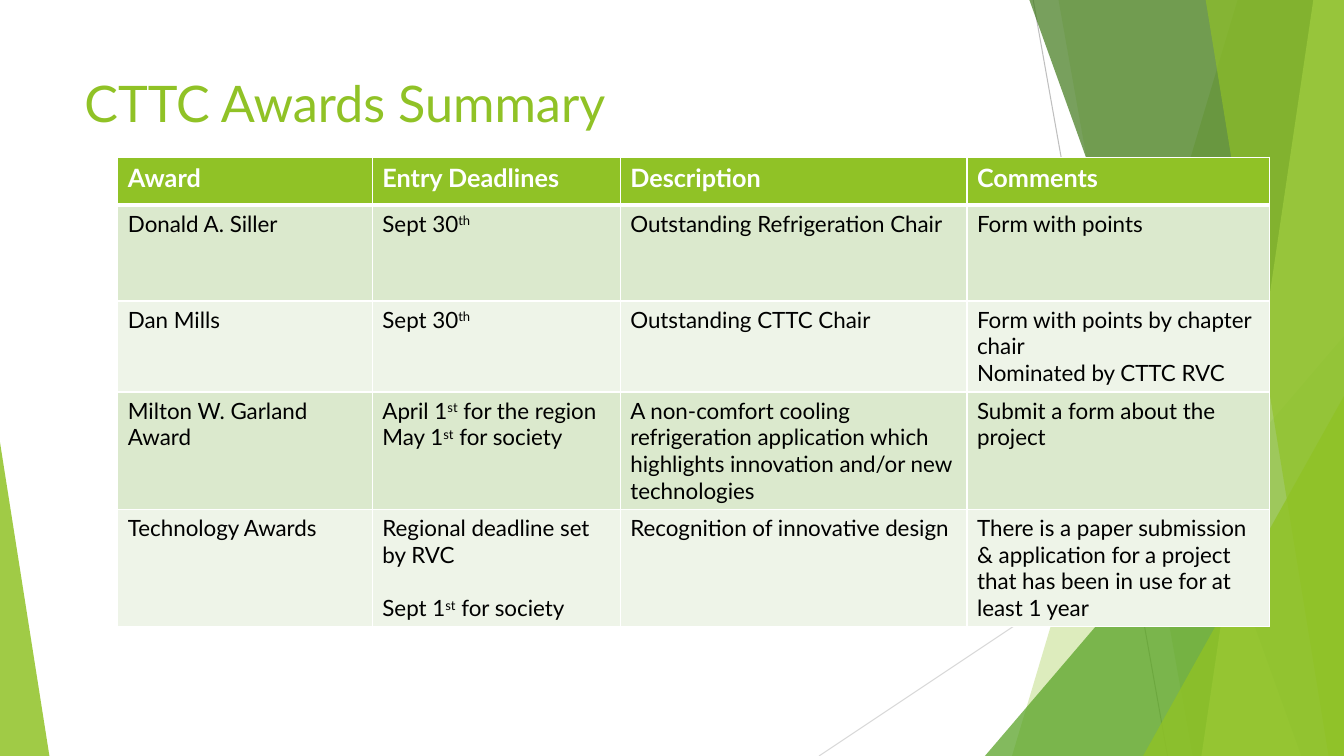
from pptx import Presentation
from pptx.dml.color import RGBColor
from pptx.enum.shapes import MSO_CONNECTOR, MSO_SHAPE
from pptx.enum.text import MSO_ANCHOR
from pptx.oxml.ns import qn
from pptx.util import Pt
from lxml.etree import SubElement

COLORS = {
    "lime": "90C226", "green": "54A021", "forest": "3F7819", "pale": "C0E474",
    "band": "DBE9CD", "light": "EEF4E8", "white": "FFFFFF", "black": "000000",
    "gray": "BFBFBF", "silver": "D9D9D9",
}
FONT = "Lato"
WIDTH, HEIGHT = 960, 540
COLUMNS = [181.8, 177.1, 247.7, 216.2]
ROWS = [34.3, 68.4, 65, 83.8, 83.8]
AWARDS = [
    ["Award", "Entry Deadlines", "Description", "Comments"],
    ["Donald A. Siller", "Sept 30^th^", "Outstanding Refrigeration Chair", "Form with points"],
    ["Dan Mills", "Sept 30^th^", "Outstanding CTTC Chair",
     "Form with points by chapter chair\nNominated by CTTC RVC"],
    ["Milton W. Garland Award", "April 1^st^ for the region\nMay 1^st^ for society",
     "A non-comfort cooling refrigeration application which highlights "
     "innovation and/or new technologies", "Submit a form about the project"],
    ["Technology Awards", "Regional deadline set by RVC\nSept 1^st^ for society",
     "Recognition of innovative design",
     "There is a paper submission & application for a project that has been "
     "in use for at least 1 year"],
]
DEADLINE_GAP = (4, 1)


def rgb(name):
    """Return the named colour."""
    return RGBColor.from_string(COLORS[name])


def write_text(frame, text, size, color, bold=False, gap=0):
    """Write lines into a frame, raising the parts between carets."""
    frame.word_wrap = True
    for index, line in enumerate(text.split("\n")):
        para = frame.paragraphs[0] if index == 0 else frame.add_paragraph()
        if index and gap:
            para.space_before = Pt(gap)
        for part, words in enumerate(line.split("^")):
            if not words:
                continue
            span = para.add_run()
            span.text = words
            span.font.name, span.font.size = FONT, Pt(size)
            span.font.bold, span.font.color.rgb = bold, rgb(color)
            if part % 2:
                span.font._element.set("baseline", "30000")


def tint(shape, color, opacity):
    """Give a shape a translucent fill with no outline or shadow."""
    shape.shadow.inherit = False
    shape.line.fill.background()
    shape.fill.solid()
    shape.fill.fore_color.rgb = rgb(color)
    value = shape._element.spPr.find(".//" + qn("a:srgbClr"))
    SubElement(value, qn("a:alpha"), val=str(opacity * 1000))


def add_ray(page, start, end, color):
    """Draw a thin line between two points."""
    ray = page.shapes.add_connector(
        MSO_CONNECTOR.STRAIGHT, *(Pt(value) for value in (*start, *end)))
    ray.line.color.rgb, ray.line.width = rgb(color), Pt(0.75)
    SubElement(ray._element.spPr, qn("a:effectLst"))


def add_facet(page, top_left, bottom_left, color, opacity):
    """Draw a full-height band that reaches the right edge."""
    top = -0.6
    outline = page.shapes.build_freeform(Pt(top_left), Pt(top), 1.0)
    corners = [(WIDTH, top), (WIDTH, HEIGHT), (bottom_left, HEIGHT)]
    outline.add_line_segments([(Pt(x), Pt(y)) for x, y in corners], close=True)
    tint(outline.convert_to_shape(), color, opacity)


def add_triangle(page, left, top, width, apex, color, opacity):
    """Draw a triangle that stands on the bottom edge."""
    shape = page.shapes.add_shape(
        MSO_SHAPE.ISOSCELES_TRIANGLE, Pt(left), Pt(top), Pt(width), Pt(HEIGHT - top))
    shape.adjustments[0] = apex
    tint(shape, color, opacity)


def add_backdrop(page):
    """Place the green facets from back to front."""
    add_ray(page, (738, 0), (834, HEIGHT), "gray")
    add_ray(page, (WIDTH, 290), (585, HEIGHT), "silver")
    add_facet(page, 884.2, 722.9, "lime", 30)
    add_facet(page, 756, 851.8, "lime", 20)
    add_triangle(page, 703.5, 240, 256.5, 1, "green", 72)
    add_facet(page, 735.1, 929.5, "forest", 70)
    add_facet(page, 938.2, 858.2, "pale", 70)
    add_facet(page, 861.1, 949, "lime", 65)
    add_triangle(page, 816.5, 283, 143.5, 1, "lime", 80)
    add_triangle(page, 0, 316, 35.3, 0, "lime", 85)


def add_borders(cell, top, bottom):
    """Give a cell white edges with the given top and bottom widths."""
    properties = cell._tc.get_or_add_tcPr()
    for side, width in (("L", 1), ("R", 1), ("T", top), ("B", bottom)):
        edge = SubElement(properties, qn("a:ln" + side), w=str(Pt(width)))
        fill = SubElement(edge, qn("a:solidFill"))
        SubElement(fill, qn("a:srgbClr"), val=COLORS["white"])


def add_awards(page, left, top):
    """Place the table of awards."""
    table = page.shapes.add_table(
        len(ROWS), len(COLUMNS), Pt(left), Pt(top), Pt(sum(COLUMNS)), Pt(sum(ROWS))).table
    for column, width in zip(table.columns, COLUMNS):
        column.width = Pt(width)
    for row, height in enumerate(ROWS):
        table.rows[row].height = Pt(height)
        header = row == 0
        shade = "lime" if header else "band" if row % 2 else "light"
        for column, text in enumerate(AWARDS[row]):
            cell = table.cell(row, column)
            add_borders(cell, 3 if row == 1 else 1, 3 if header else 1)
            cell.fill.solid()
            cell.fill.fore_color.rgb = rgb(shade)
            write_text(cell.text_frame, text, 18 if header else 16,
                       "white" if header else "black", bold=header,
                       gap=19.2 if (row, column) == DEADLINE_GAP else 0)


def add_title(page, left, top, width, height):
    """Place the slide title."""
    box = page.shapes.add_textbox(Pt(left), Pt(top), Pt(width), Pt(height))
    box.text_frame.vertical_anchor = MSO_ANCHOR.TOP
    write_text(box.text_frame, "CTTC Awards Summary", 36, "lime")


def main():
    """Build and save the deck."""
    deck = Presentation()
    deck.slide_width, deck.slide_height = Pt(WIDTH), Pt(HEIGHT)
    page = deck.slides.add_slide(deck.slide_layouts[6])
    add_backdrop(page)
    add_awards(page, 84.2, 112.3)
    add_title(page, 53.3, 48.2, 676.8, 103.7)
    deck.save("out.pptx")


if __name__ == "__main__":
    main()
